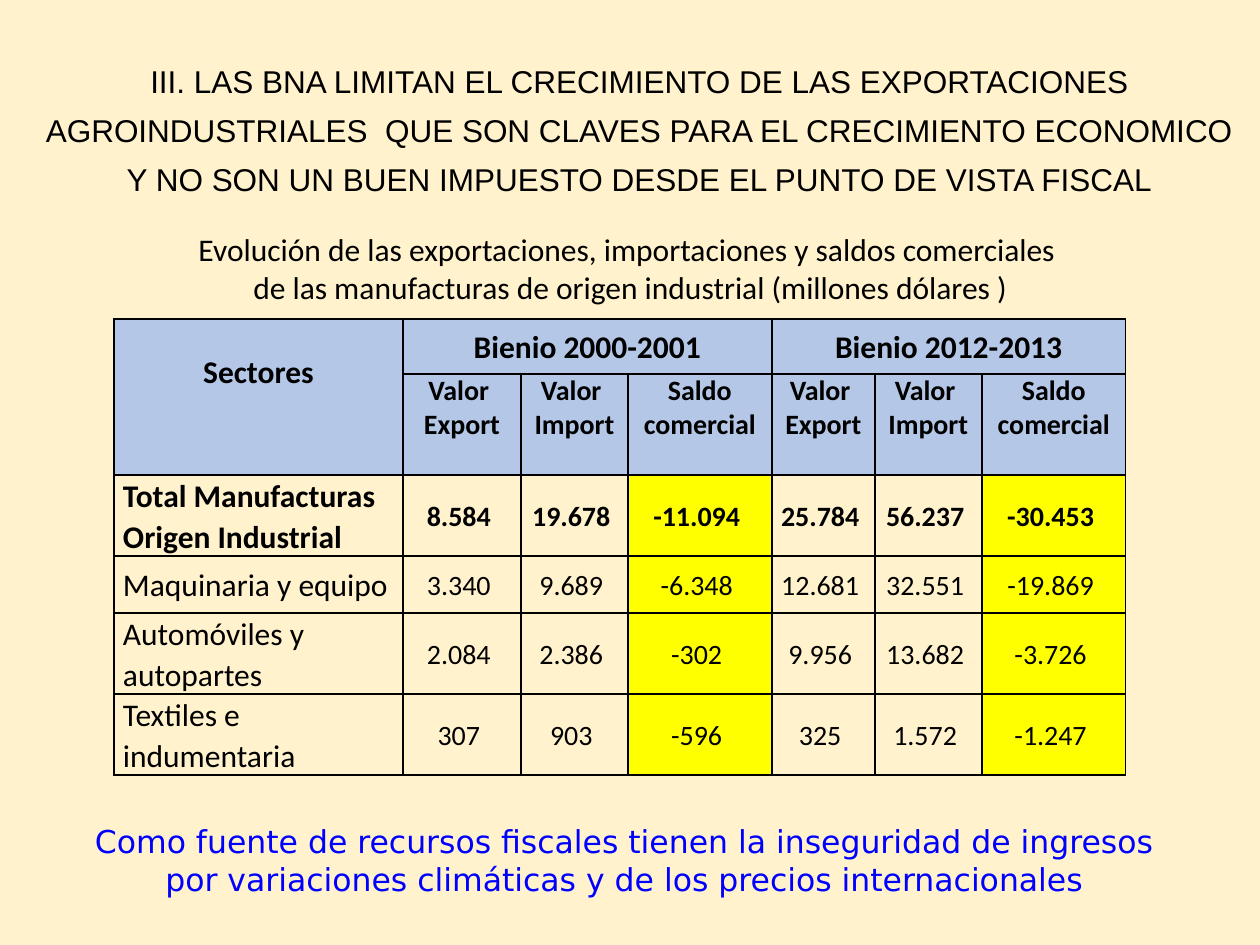
import dataclasses

import lxml.etree
import pptx
import pptx.dml.color
import pptx.enum.text
import pptx.oxml.ns
import pptx.util

ALIGN = pptx.enum.text.PP_ALIGN
ANCHOR = pptx.enum.text.MSO_ANCHOR


@dataclasses.dataclass(frozen=True)
class Theme:
    """Colours, fonts and type sizes of the slide."""

    background: str = "FFF2CC"
    header: str = "B4C7E7"
    balance: str = "FFFF00"
    ink: str = "000000"
    accent: str = "0000FF"
    title_font: str = "Arial"
    table_font: str = "Calibri"
    note_font: str = "DejaVu Sans"
    large: int = 18
    small: int = 16
    line_ratio: float = 1.07
    title_leading: int = 28
    border: int = 1


THEME = Theme()
TITLE = [
    "III. LAS BNA LIMITAN EL CRECIMIENTO DE LAS EXPORTACIONES "
    "AGROINDUSTRIALES  QUE SON CLAVES PARA EL CRECIMIENTO ECONOMICO",
    "Y NO SON UN BUEN IMPUESTO DESDE EL PUNTO DE VISTA FISCAL",
]
CAPTION = [
    "Evolución de las exportaciones, importaciones y saldos comerciales ",
    "de las manufacturas de origen industrial (millones dólares )",
]
NOTE = [
    "Como fuente de recursos fiscales tienen la inseguridad de ingresos "
    "por variaciones climáticas y de los precios internacionales"
]
PERIODS = ["Bienio 2000-2001", "Bienio 2012-2013"]
MEASURES = ["Valor \nExport", "Valor \nImport", "Saldo comercial"]
SECTORS = [
    ("Total Manufacturas Origen Industrial",
     ["8.584", "19.678", "-11.094", "25.784", "56.237", "-30.453"]),
    ("Maquinaria y equipo",
     ["3.340", "9.689", "-6.348", "12.681", "32.551", "-19.869"]),
    ("Automóviles y autopartes",
     ["2.084", "2.386", "-302", "9.956", "13.682", "-3.726"]),
    ("Textiles e indumentaria",
     ["307", "903", "-596", "325", "1.572", "-1.247"]),
]
COLUMNS = [289, 118, 107, 144, 103, 107, 144]
ROWS = [55, 101, 81, 57, 81, 81]


def px(length):
    """Turn pixels at 126 to the inch into EMU."""
    return pptx.util.Emu(round(length * 914400 / 126))


def rgb(code):
    """Return the colour for a hex code."""
    return pptx.dml.color.RGBColor.from_string(code)


def write(frame, lines, font, size, color, bold=False, align=ALIGN.CENTER, spacing=None):
    """Fill a text frame with one formatted paragraph per line."""
    frame.word_wrap = True
    frame.text = "\n".join(lines)
    for para in frame.paragraphs:
        para.alignment = align
        para.line_spacing = spacing
        for span in para.runs:
            span.font.name = font
            span.font.size = pptx.util.Pt(size)
            span.font.bold = bold
            span.font.color.rgb = rgb(color)


def add_text(page, box, lines, font, color, spacing=None):
    """Place a centred block of text in the given box."""
    shape = page.shapes.add_textbox(*map(px, box))
    write(shape.text_frame, lines, font, THEME.large, color, spacing=spacing)


def add_borders(cell):
    """Draw a solid line on every side of a cell."""
    properties = cell._tc.get_or_add_tcPr()
    name = pptx.oxml.ns.qn
    for side in ("a:lnL", "a:lnR", "a:lnT", "a:lnB"):
        line = lxml.etree.SubElement(
            properties, name(side), w=str(pptx.util.Pt(THEME.border)))
        fill = lxml.etree.SubElement(line, name("a:solidFill"))
        lxml.etree.SubElement(fill, name("a:srgbClr"), val=THEME.ink)


def fill_cell(cell, text, size, fill=None, bold=False, align=ALIGN.CENTER,
              anchor=ANCHOR.MIDDLE, spacing=THEME.line_ratio):
    """Write and colour one table cell."""
    if fill:
        cell.fill.solid()
        cell.fill.fore_color.rgb = rgb(fill)
    else:
        cell.fill.background()
    cell.vertical_anchor = anchor
    write(cell.text_frame, text.split("\n"), THEME.table_font, size,
          THEME.ink, bold, align, spacing)


def add_header(table):
    """Fill the two header rows with their merged cells."""
    corner = table.cell(0, 0)
    corner.merge(table.cell(1, 0))
    fill_cell(corner, "Sectores", THEME.large, THEME.header, True, anchor=ANCHOR.TOP)
    corner.margin_top = px(32)
    for group, period in enumerate(PERIODS):
        first = 1 + group * len(MEASURES)
        heading = table.cell(0, first)
        heading.merge(table.cell(0, first + len(MEASURES) - 1))
        fill_cell(heading, period, THEME.large, THEME.header, True)
        for offset, measure in enumerate(MEASURES):
            fill_cell(table.cell(1, first + offset), measure, THEME.small,
                      THEME.header, True, anchor=ANCHOR.TOP, spacing=None)


def add_sectors(table):
    """Fill the body rows, with the trade balances highlighted."""
    for row, (sector, values) in enumerate(SECTORS, start=2):
        bold = row == 2
        fill_cell(table.cell(row, 0), sector, THEME.large, bold=bold, align=ALIGN.LEFT)
        for column, value in enumerate(values, start=1):
            fill = THEME.balance if column % len(MEASURES) == 0 else None
            fill_cell(table.cell(row, column), f"{value} ", THEME.small, fill, bold)


def add_trade_table(page, left, top):
    """Place the table of trade by sector and period."""
    table = page.shapes.add_table(
        len(ROWS), len(COLUMNS), px(left), px(top),
        px(sum(COLUMNS)), px(sum(ROWS))).table
    table.first_row = table.horz_banding = False
    for column, width in zip(table.columns, COLUMNS):
        column.width = px(width)
    for row, height in zip(table.rows, ROWS):
        row.height = px(height)
    for cell in table.iter_cells():
        cell.margin_left = cell.margin_right = px(9)
        cell.margin_top = cell.margin_bottom = 0
        add_borders(cell)
    add_header(table)
    add_sectors(table)


def main():
    """Build the slide and save the deck."""
    deck = pptx.Presentation()
    deck.slide_width, deck.slide_height = px(1260), px(945)
    page = deck.slides.add_slide(deck.slide_layouts[6])
    page.background.fill.solid()
    page.background.fill.fore_color.rgb = rgb(THEME.background)
    add_text(page, (74, 816, 1101, 102), NOTE, THEME.note_font, THEME.accent)
    add_text(page, (29, 45, 1221, 156), TITLE, THEME.title_font, THEME.ink,
             pptx.util.Pt(THEME.title_leading))
    add_trade_table(page, 114, 319)
    add_text(page, (20, 224, 1221, 89), CAPTION, THEME.table_font, THEME.ink)
    deck.save("out.pptx")


if __name__ == "__main__":
    main()
